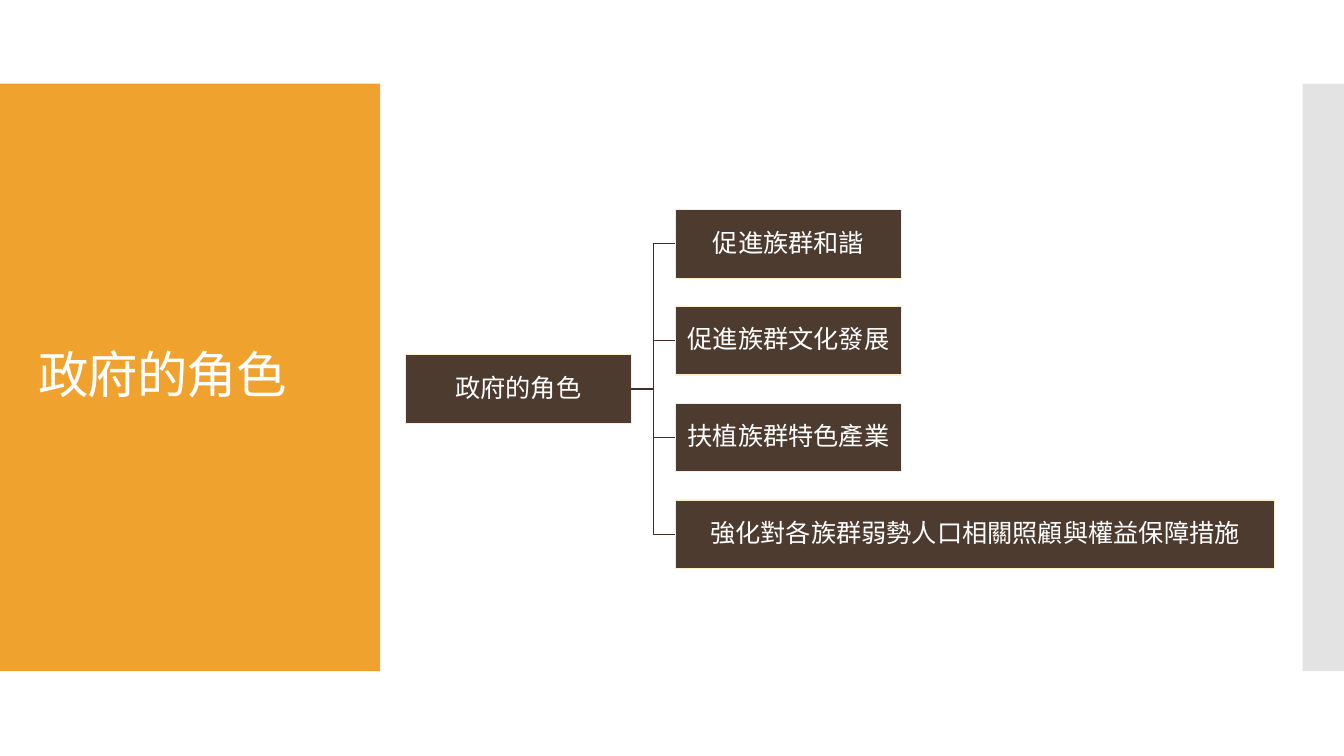
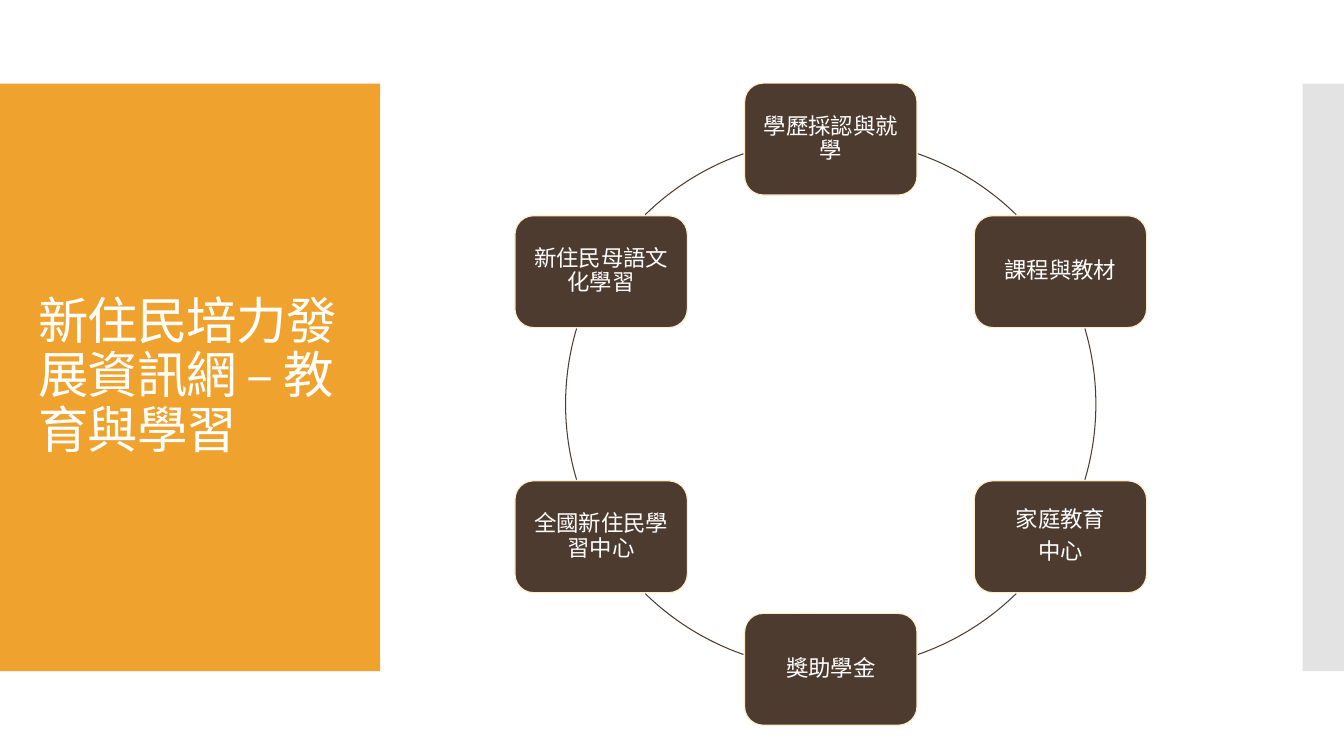
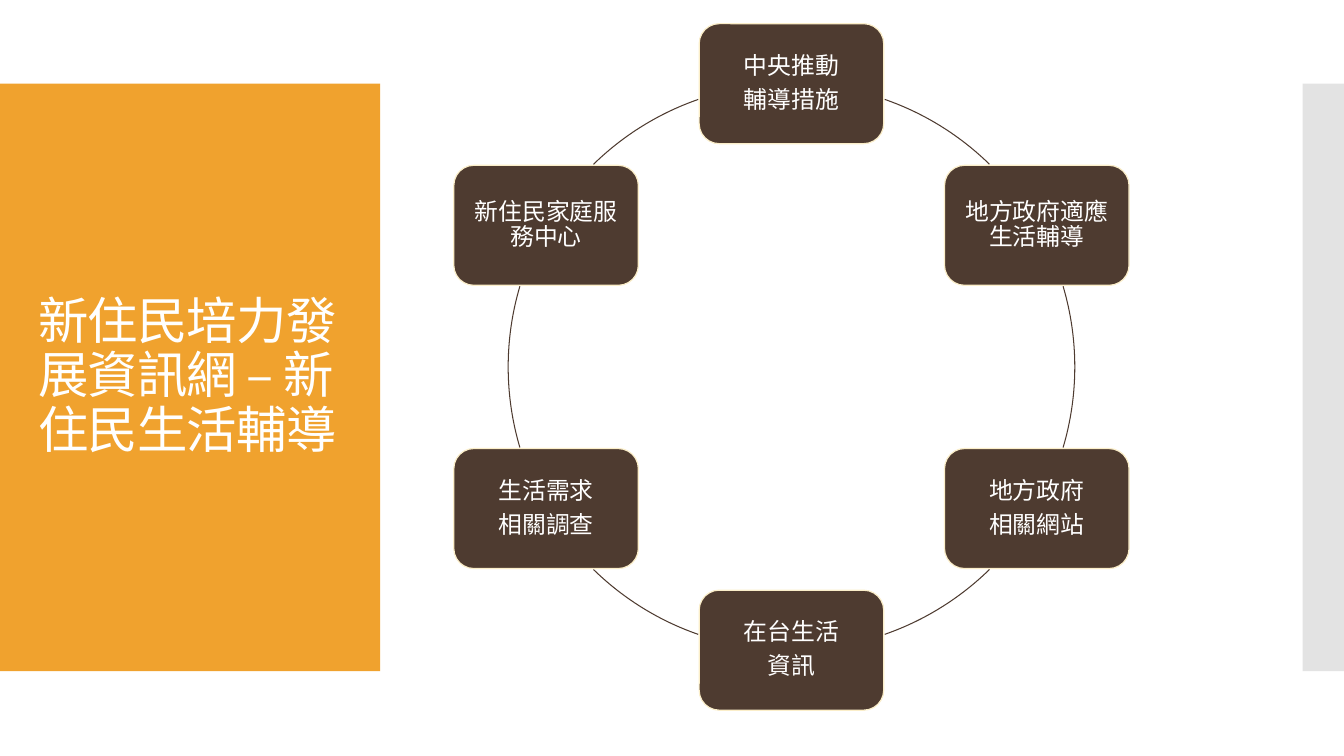
from math import acos, asin, cos, degrees, radians, sin

from lxml.etree import SubElement
from pptx import Presentation
from pptx.dml.color import RGBColor
from pptx.enum.shapes import MSO_CONNECTOR, MSO_SHAPE
from pptx.enum.text import MSO_ANCHOR, MSO_AUTO_SIZE, PP_ALIGN
from pptx.oxml.ns import qn
from pptx.util import Inches, Pt

ORANGE, GREY, WHITE = "F0A22E", "C8C8C8", "FFFFFF"
BROWN, DARK_BROWN, CREAM = "4E3B30", "3E2F26", "FBEEC9"
FONT = "Cabin"
TITLE_ONLY = 5
RIGHT_SITE, LEFT_SITE = 3, 1


def color(hex_string):
    return RGBColor.from_string(hex_string)


def set_all(target, values):
    for name, value in values.items():
        setattr(target, name, value)


class Deck:
    """Holds the shared style and the slide being drawn."""

    def __init__(self):
        self.presentation = Presentation()
        self.presentation.slide_width = Inches(13.33)
        self.presentation.slide_height = Inches(7.5)
        self.slide = None

    def add_slide(self, title):
        layout = self.presentation.slide_layouts[TITLE_ONLY]
        self.slide = self.presentation.slides.add_slide(layout)
        self.shape(MSO_SHAPE.RECTANGLE, 0, 0.83, 3.77, 5.83, ORANGE)
        side_band = self.shape(MSO_SHAPE.RECTANGLE, 12.92, 0.83, 0.41, 5.83, GREY)
        fill_color = side_band.element.find(".//" + qn("a:srgbClr"))
        SubElement(fill_color, qn("a:alpha")).set("val", "50000")
        self.title(title)

    def title(self, text):
        placeholder = self.slide.shapes.title
        set_all(placeholder, {"left": Inches(0.28), "top": Inches(1.23),
                              "width": Inches(3.22), "height": Inches(5.03)})
        self.fill_text(placeholder, text, 36, 0.1, PP_ALIGN.LEFT)
        for properties in placeholder.element.iter(qn("a:rPr")):
            properties.set("spc", "-60")
        # The title lies in front of the orange band
        placeholder.element.getparent().append(placeholder.element)

    def shape(self, kind, left, top, width, height, fill=None, line=None, line_width=0.85):
        shape = self.slide.shapes.add_shape(
            kind, Inches(left), Inches(top), Inches(width), Inches(height))
        shape.shadow.inherit = False
        if fill:
            shape.fill.solid()
            shape.fill.fore_color.rgb = color(fill)
        else:
            shape.fill.background()
        if line:
            shape.line.color.rgb = color(line)
            shape.line.width = Pt(line_width)
        else:
            shape.line.fill.background()
        return shape

    def fill_text(self, shape, text, size, inset, alignment, space_after=0):
        frame = shape.text_frame
        frame.text = text
        set_all(frame, {"word_wrap": True, "auto_size": MSO_AUTO_SIZE.NONE,
                        "vertical_anchor": MSO_ANCHOR.MIDDLE})
        set_all(frame, {f"margin_{side}": Inches(inset)
                        for side in ("left", "top", "right", "bottom")})
        for paragraph in frame.paragraphs:
            set_all(paragraph, {"alignment": alignment, "line_spacing": 0.9,
                                "space_before": Pt(0), "space_after": Pt(space_after)})
            for run in paragraph.runs:
                set_all(run.font, {"name": FONT, "size": Pt(size)})
                run.font.color.rgb = color(WHITE)

    def node(self, kind, text, left, top, width, height, size, inset):
        box = self.shape(kind, left, top, width, height, BROWN, CREAM)
        self.fill_text(box, text, size, inset, PP_ALIGN.CENTER, round(0.35 * size, 1))
        return box

    def elbow(self, parent, child):
        connector = self.slide.shapes.add_connector(MSO_CONNECTOR.ELBOW, 0, 0, 0, 0)
        connector.begin_connect(parent, RIGHT_SITE)
        connector.end_connect(child, LEFT_SITE)
        connector.line.color.rgb = color(DARK_BROWN)
        connector.line.width = Pt(0.85)
        SubElement(connector.element.spPr, qn("a:effectLst"))

    def tree(self, root, branches):
        """Draws a root box joined to a column of (text, width) branches."""
        height, pitch, top = 0.68, 0.96, 2.08
        middle = top + pitch * (len(branches) - 1) / 2
        parent = self.node(MSO_SHAPE.RECTANGLE, root, 4.02, middle, 2.24, height, 18, 0.01)
        for index, (text, width) in enumerate(branches):
            child = self.node(MSO_SHAPE.RECTANGLE, text, 6.7, top + index * pitch,
                              width, height, 18, 0.01)
            self.elbow(parent, child)

    def ring(self, labels, center_x, center_y, radius, width, height, size):
        """Sets six boxes clockwise from the top, with arcs in the gaps."""
        for index, text in enumerate(labels):
            angle = radians(60 * index - 90)
            self.node(MSO_SHAPE.ROUNDED_RECTANGLE, text,
                      center_x + radius * cos(angle) - width / 2,
                      center_y + radius * sin(angle) - height / 2,
                      width, height, size, 0.07)

        # Angles from the horizontal where the circle leaves the boxes
        gap = 0.01
        beside_top = degrees(acos((width / 2 + gap) / radius))
        above_side = degrees(asin(0.5 + (height / 2 + gap) / radius))
        below_side = degrees(asin(0.5 - (height / 2 + gap) / radius))
        right_arcs = [(-beside_top, -above_side), (-below_side, below_side),
                      (above_side, beside_top)]
        for turn in (0, 180):
            for start, end in right_arcs:
                arc = self.shape(MSO_SHAPE.ARC, center_x - radius, center_y - radius,
                                 2 * radius, 2 * radius, line=BROWN, line_width=0.75)
                # Arc angles count 60000 to a degree, adjustments 100000 to one
                arc.adjustments[0] = (start + turn) % 360 * 0.6
                arc.adjustments[1] = (end + turn) % 360 * 0.6


def main():
    deck = Deck()

    deck.add_slide("政府的角色")
    deck.tree("政府的角色", [
        ("促進族群和諧", 2.24),
        ("促進族群文化發展", 2.24),
        ("扶植族群特色產業", 2.24),
        ("強化對各族群弱勢人口相關照顧與權益保障措施", 5.94),
    ])

    deck.add_slide("新住民培力發展資訊網 – 教育與學習")
    deck.ring(["學歷採認與就學", "課程與教材", "家庭教育\n中心", "獎助學金",
               "全國新住民學習中心", "新住民母語文化學習"],
              center_x=8.24, center_y=4.01, radius=2.63, width=1.71, height=1.11, size=16)

    deck.add_slide("新住民培力發展資訊網 – 新住民生活輔導")
    deck.ring(["中央推動\n輔導措施", "地方政府適應生活輔導", "地方政府\n相關網站",
               "在台生活\n資訊", "生活需求\n相關調查", "新住民家庭服務中心"],
              center_x=7.85, center_y=3.64, radius=2.81, width=1.83, height=1.19, size=17)

    deck.presentation.save("out.pptx")


if __name__ == "__main__":
    main()
